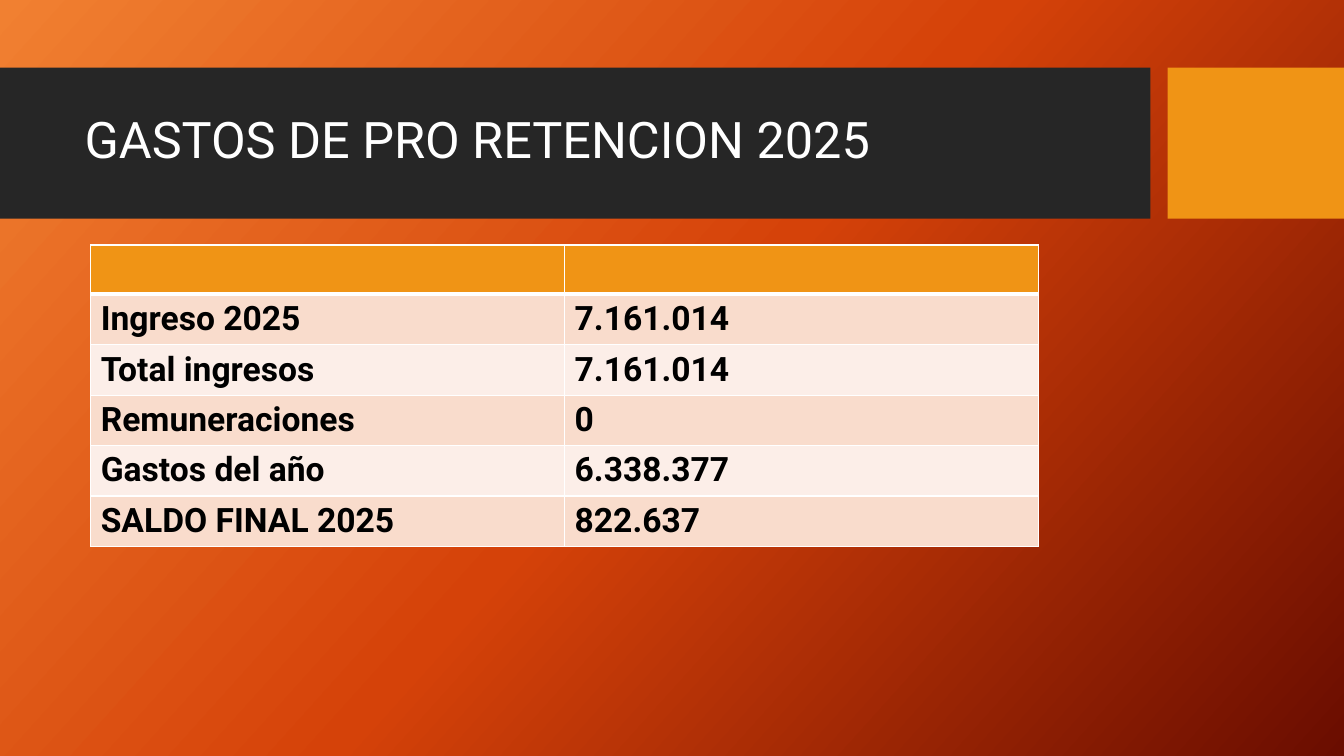
import copy

import pptx
import pptx.dml.color
import pptx.enum.shapes
import pptx.enum.text
import pptx.oxml
import pptx.oxml.ns
import pptx.util

FONT = "Roboto"
COLORS = {
    "glow": "F18031", "orange": "D54209", "maroon": "6A0D00",
    "band": "262626", "accent": "F09415", "white": "FFFFFF", "black": "000000",
    "row_dark": "F9DCCC", "row_light": "FCEEE8",
}
EXPENSES = [
    ("", ""),
    ("Ingreso 2025", "7.161.014"),
    ("Total ingresos", "7.161.014"),
    ("Remuneraciones", "0"),
    ("Gastos del año", "6.338.377"),
    ("SALDO FINAL 2025", "822.637"),
]
COLUMN_WIDTH = pptx.util.Inches(4.7)
ROW_HEIGHT = pptx.util.Inches(0.49)


def color(name):
    return pptx.dml.color.RGBColor.from_string(COLORS[name])


def add_border(cell, side, points):
    """Draw a white line on one side (L, R, T or B) of a table cell."""
    namespace = pptx.oxml.ns.nsdecls("a")
    width = pptx.util.Pt(points)
    line = pptx.oxml.parse_xml(
        f'<a:ln{side} {namespace} w="{width}"><a:solidFill>'
        f'<a:srgbClr val="{COLORS["white"]}"/></a:solidFill></a:ln{side}>')
    cell._tc.get_or_add_tcPr().append(line)


presentation = pptx.Presentation()
presentation.slide_width = pptx.util.Inches(13.33)
presentation.slide_height = pptx.util.Inches(7.5)
slide = presentation.slides.add_slide(presentation.slide_layouts[6])

# Background gradient
background = slide.background.fill
background.gradient()
background.gradient_angle = 360 - 42
stop_list = slide.element.find(".//" + pptx.oxml.ns.qn("a:gsLst"))
stop_list.insert(1, copy.deepcopy(stop_list[0]))
stops = zip(background.gradient_stops, (0, 0.5, 1), ("glow", "orange", "maroon"))
for stop, position, name in stops:
    stop.position = position
    stop.color.rgb = color(name)

# Title band and accent block
for left, width, name in ((0, 11.41, "band"), (11.58, 1.75, "accent")):
    block = slide.shapes.add_shape(
        pptx.enum.shapes.MSO_SHAPE.RECTANGLE,
        pptx.util.Inches(left), pptx.util.Inches(0.67),
        pptx.util.Inches(width), pptx.util.Inches(1.5))
    block.shadow.inherit = False
    block.fill.solid()
    block.fill.fore_color.rgb = color(name)
    block.line.fill.background()

# Title
title = slide.shapes.add_textbox(
    pptx.util.Inches(0.74), pptx.util.Inches(0.82),
    pptx.util.Inches(10.51), pptx.util.Inches(1.18))
title.text_frame.word_wrap = True
title.text_frame.vertical_anchor = pptx.enum.text.MSO_ANCHOR.MIDDLE
title.text_frame.text = "GASTOS DE PRO RETENCION 2025"
paragraph = title.text_frame.paragraphs[0]
paragraph.line_spacing = 0.9
title_font = paragraph.runs[0].font
title_font.name = FONT
title_font.size = pptx.util.Pt(36)
title_font.color.rgb = color("white")

# Expense table
table = slide.shapes.add_table(
    len(EXPENSES), 2, pptx.util.Inches(0.9), pptx.util.Inches(2.43),
    2 * COLUMN_WIDTH, len(EXPENSES) * ROW_HEIGHT).table
for column in table.columns:
    column.width = COLUMN_WIDTH
for row_index, values in enumerate(EXPENSES):
    table.rows[row_index].height = ROW_HEIGHT
    if row_index == 0:
        fill_name = "accent"
    else:
        fill_name = "row_dark" if row_index % 2 else "row_light"
    for column_index, value in enumerate(values):
        cell = table.cell(row_index, column_index)
        add_border(cell, "L", 1)
        add_border(cell, "R", 1)
        add_border(cell, "T", 3 if row_index == 1 else 1)
        add_border(cell, "B", 3 if row_index == 0 else 1)
        cell.fill.solid()
        cell.fill.fore_color.rgb = color(fill_name)
        cell.text_frame.text = value
        for run in cell.text_frame.paragraphs[0].runs:
            run.font.name = FONT
            run.font.size = pptx.util.Pt(24)
            run.font.bold = True
            run.font.color.rgb = color("black")

presentation.save("out.pptx")
